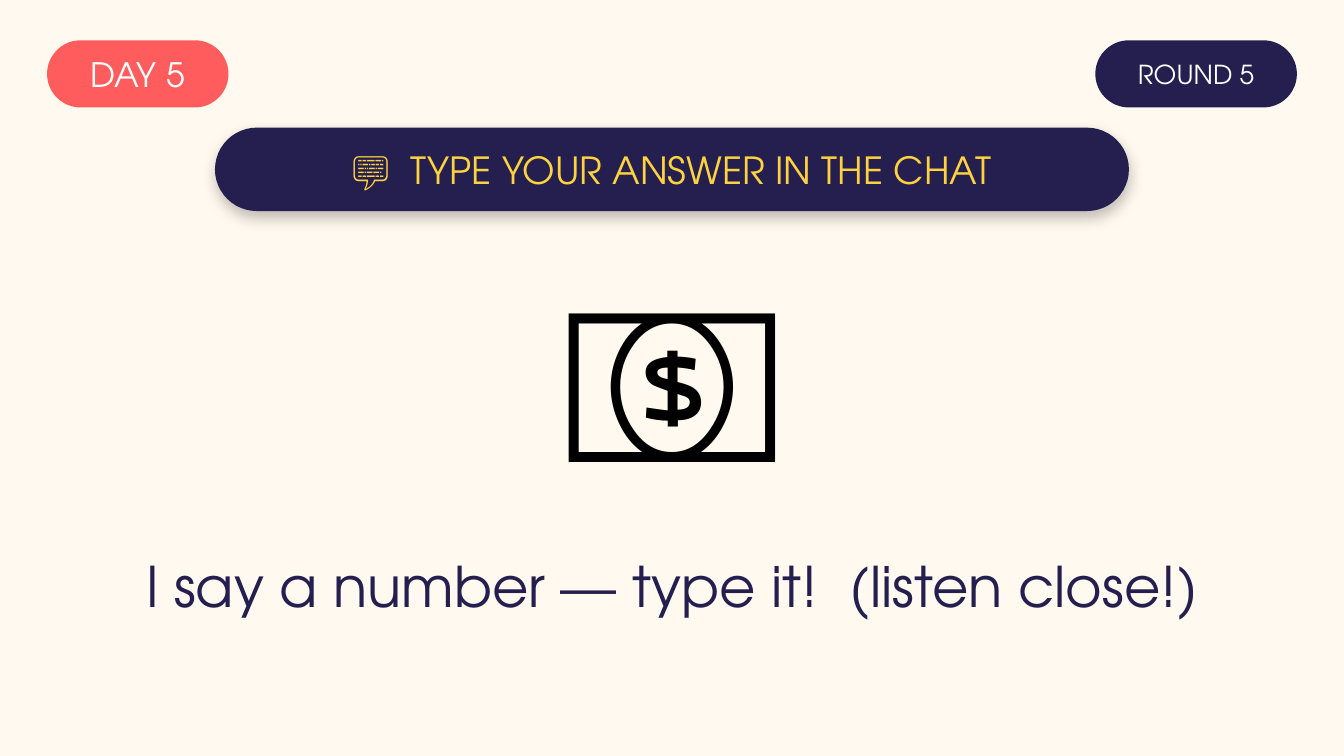
from lxml import etree
from pptx import Presentation
from pptx.dml.color import RGBColor
from pptx.enum import shapes, text
from pptx.oxml.ns import qn
from pptx.util import Emu, Pt

# Content: each text is a tuple of parts, set apart by a wide space
NAVY, CORAL, YELLOW, WHITE, CREAM = "241F4E", "FF5D5D", "FFD23F", "FFFFFF", "FFF9EF"
FONT = "TeX Gyre Adventor"
PILLS = [
    {"parts": ("DAY 5",), "at": (70, 60, 270, 100), "fill": CORAL, "size": 18, "color": WHITE},
    {"parts": ("ROUND 5",), "at": (1630, 60, 300, 100), "fill": NAVY, "size": 14, "color": WHITE},
    {"parts": ("💬", "TYPE YOUR ANSWER IN THE CHAT"), "at": (320, 190, 1360, 124),
     "fill": NAVY, "size": 20, "color": YELLOW, "raised": True},
]
PICTOGRAM = ("💵",)
PROMPT = ("I say a number — type it!", "(listen close!)")

WIDTH, HEIGHT = 2000, 1125
SCALE = 914400 // 200  # EMU per px
SPACE_WIDTH = 0.28     # of the text size


def px(value):
    return Emu(value * SCALE)


def rgb(value):
    return RGBColor.from_string(value)


def place(box, at):
    box.left, box.top, box.width, box.height = map(px, at)


def write(box, parts, size, color, font=FONT, **frame_format):
    frame = box.text_frame
    settings = {"word_wrap": True, "auto_size": text.MSO_AUTO_SIZE.NONE, **frame_format}
    for name, value in settings.items():
        setattr(frame, name, value)
    para = frame.paragraphs[0]
    para.alignment = text.PP_ALIGN.CENTER
    for index, part in enumerate(parts):
        for words in ((" ", part) if index else (part,)):
            span = para.add_run()
            span.text = words
            for name, value in {"size": Pt(size), "name": font}.items():
                setattr(span.font, name, value)
            span.font.color.rgb = rgb(color)
            if words == " ":  # letter spacing doubles the gap
                span.font._element.set("spc", str(round(size * SPACE_WIDTH * 100)))


def add_drop_shadow(shape):
    effects = shape._element.spPr.find(qn("a:effectLst"))
    shadow = etree.SubElement(effects, qn("a:outerShdw"), blurRad=str(Pt(8)), dist=str(Pt(3)),
                              dir=str(90 * 60000), algn="ctr", rotWithShape="0")
    tint = etree.SubElement(shadow, qn("a:srgbClr"), val="000000")
    etree.SubElement(tint, qn("a:alpha"), val="25000")


def add_pill(page, parts, at, fill, size, color, raised=False):
    pill = page.shapes.add_shape(shapes.MSO_SHAPE.ROUNDED_RECTANGLE, *map(px, at))
    pill.adjustments[0] = 0.5
    pill.shadow.inherit = False
    pill.fill.solid()
    pill.fill.fore_color.rgb = rgb(fill)
    pill.line.fill.background()
    if raised:
        add_drop_shadow(pill)
    write(pill, parts, size, color, vertical_anchor=text.MSO_ANCHOR.MIDDLE,
          margin_left=0, margin_right=0, margin_top=0, margin_bottom=0)


def main():
    deck = Presentation()
    deck.slide_width, deck.slide_height = px(WIDTH), px(HEIGHT)
    page = deck.slides.add_slide(deck.slide_layouts[5])
    page.background.fill.solid()
    page.background.fill.fore_color.rgb = rgb(CREAM)

    # Prompt
    prompt = page.shapes.title
    place(prompt, (100, 770, WIDTH - 200, 200))
    write(prompt, PROMPT, 30, NAVY, vertical_anchor=text.MSO_ANCHOR.MIDDLE)

    # Labels and banner
    for pill in PILLS:
        add_pill(page, **pill)

    # Banknote pictogram
    pictogram = page.shapes.add_textbox(*map(px, (0, 340, WIDTH, 370)))
    write(pictogram, PICTOGRAM, 122, "000000", font="Calibri",
          vertical_anchor=text.MSO_ANCHOR.TOP)

    deck.save("out.pptx")


if __name__ == "__main__":
    main()
